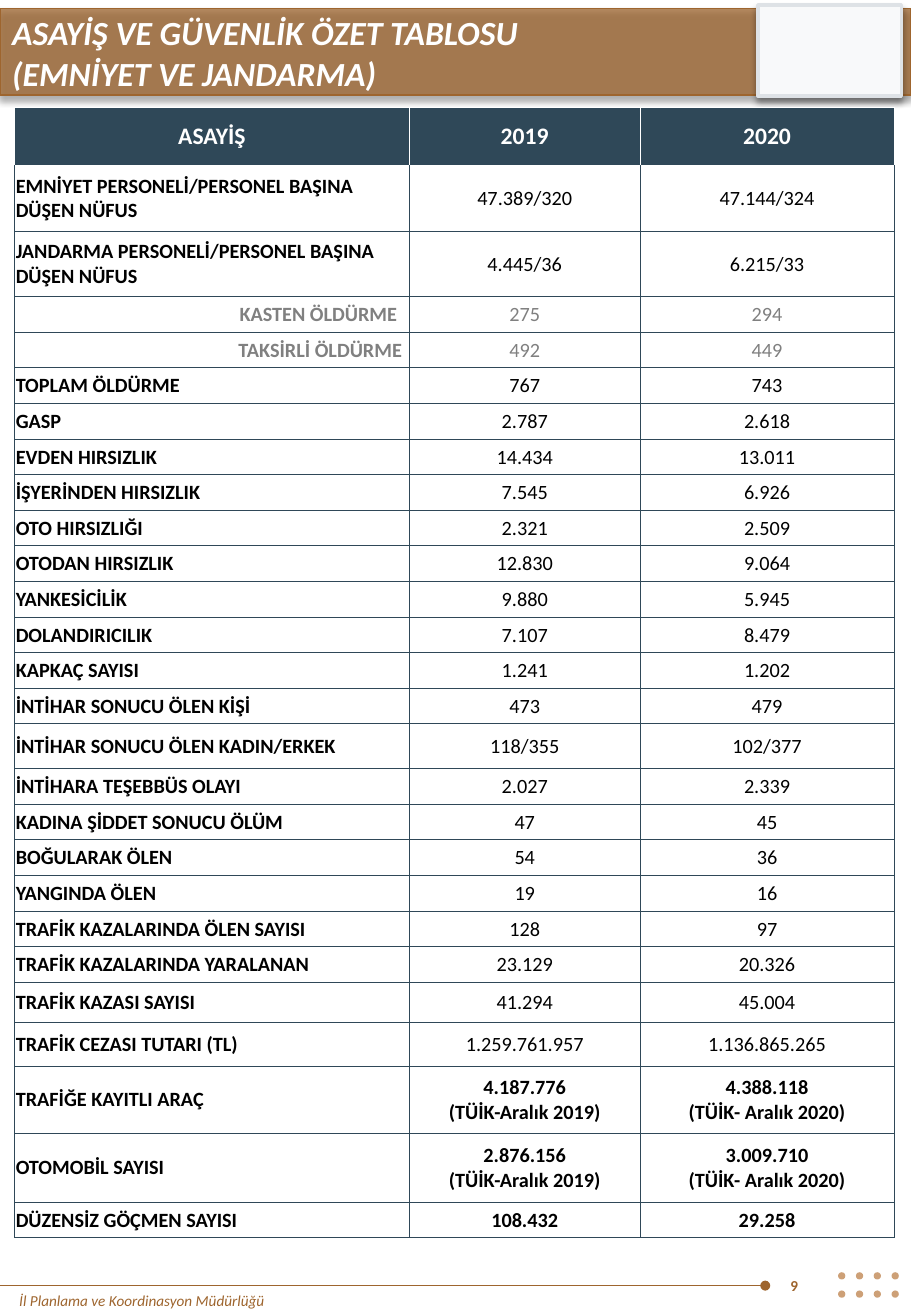
from lxml.etree import SubElement as Sub
from pptx import Presentation
from pptx.dml.color import RGBColor
from pptx.enum.shapes import MSO_CONNECTOR as Link, MSO_SHAPE as Kind
from pptx.enum.text import MSO_ANCHOR as Anchor, MSO_AUTO_SIZE as Fit, PP_ALIGN as Align
from pptx.oxml.ns import qn
from pptx.util import Inches, Pt

BROWN, TAN, NAVY, WHITE, BLACK, GREY = "9E652E", "CDA077", "2F4858", "FFFFFF", "000000", "808080"

TITLE = "ASAYİŞ VE GÜVENLİK ÖZET TABLOSU\n(EMNİYET VE JANDARMA)"
HEAD = ("ASAYİŞ", "2019", "2020")
ROWS = [
    ("EMNİYET PERSONELİ/PERSONEL BAŞINA DÜŞEN NÜFUS", "47.389/320", "47.144/324"),
    ("JANDARMA PERSONELİ/PERSONEL BAŞINA DÜŞEN NÜFUS", "4.445/36", "6.215/33"),
    ("KASTEN ÖLDÜRME", "275", "294"),
    ("TAKSİRLİ ÖLDÜRME", "492", "449"),
    ("TOPLAM ÖLDÜRME", "767", "743"),
    ("GASP", "2.787", "2.618"),
    ("EVDEN HIRSIZLIK", "14.434", "13.011"),
    ("İŞYERİNDEN HIRSIZLIK", "7.545", "6.926"),
    ("OTO HIRSIZLIĞI", "2.321", "2.509"),
    ("OTODAN HIRSIZLIK", "12.830", "9.064"),
    ("YANKESİCİLİK", "9.880", "5.945"),
    ("DOLANDIRICILIK", "7.107", "8.479"),
    ("KAPKAÇ SAYISI", "1.241", "1.202"),
    ("İNTİHAR SONUCU ÖLEN KİŞİ", "473", "479"),
    ("İNTİHAR SONUCU ÖLEN KADIN/ERKEK", "118/355", "102/377"),
    ("İNTİHARA TEŞEBBÜS OLAYI", "2.027", "2.339"),
    ("KADINA ŞİDDET SONUCU ÖLÜM", "47", "45"),
    ("BOĞULARAK ÖLEN", "54", "36"),
    ("YANGINDA ÖLEN", "19", "16"),
    ("TRAFİK KAZALARINDA ÖLEN SAYISI", "128", "97"),
    ("TRAFİK KAZALARINDA YARALANAN", "23.129", "20.326"),
    ("TRAFİK KAZASI SAYISI", "41.294", "45.004"),
    ("TRAFİK CEZASI TUTARI (TL)", "1.259.761.957", "1.136.865.265"),
    ("TRAFİĞE KAYITLI ARAÇ", "4.187.776\n(TÜİK-Aralık 2019)", "4.388.118\n(TÜİK- Aralık 2020)"),
    ("OTOMOBİL SAYISI", "2.876.156\n(TÜİK-Aralık 2019)", "3.009.710\n(TÜİK- Aralık 2020)"),
    ("DÜZENSİZ GÖÇMEN SAYISI", "108.432", "29.258"),
]
INDENT = {3: 0.1, 4: 0.06}  # right margin of the grey sub-rows
TALL = {0: 0.48, 1: 0.54, 2: 0.54, 15: 0.37, 22: 0.33, 23: 0.36, 24: 0.55, 25: 0.57}
BOLD_FROM = 24


def tint(hue):
    return RGBColor.from_string(hue)


def write(frame, text, size=12, hue=BLACK, bold=False, italic=False, align=Align.LEFT):
    """Fill a text frame, one paragraph per line of text."""
    frame.word_wrap = True
    frame.text = text
    for para in frame.paragraphs:
        para.alignment = align
        font = para.font
        font.name, font.size, font.bold, font.italic = "Calibri", Pt(size), bold, italic
        font.color.rgb = tint(hue)


class Page:
    def __init__(self, slide, font_size):
        self.slide, self.shapes, self.size = slide, slide.shapes, font_size

    def shape(self, kind, box, fill, line=None, width=1, alpha=None, shade=False):
        item = self.shapes.add_shape(kind, *map(Inches, box))
        item.shadow.inherit = False
        item.fill.solid()
        item.fill.fore_color.rgb = tint(fill)
        if alpha:
            hue = item.element.spPr.find(qn("a:solidFill"))[0]
            Sub(hue, qn("a:alpha"), val=str(alpha * 1000))
        if line:
            item.line.color.rgb = tint(line)
            item.line.width = Pt(width)
        else:
            item.line.fill.background()
        if shade:
            fx = item.element.spPr.find(qn("a:effectLst"))
            cast = Sub(fx, qn("a:outerShdw"), blurRad=str(Pt(4)), dist=str(Pt(3)),
                       dir="5400000", algn="t", rotWithShape="0")
            Sub(Sub(cast, qn("a:srgbClr"), val=BLACK), qn("a:alpha"), val="40000")

    def rule(self, start, end, hue, width):
        """Draw a line with a round dot at its start."""
        line = self.shapes.add_connector(Link.STRAIGHT, *map(Inches, start + end))
        line.line.color.rgb = tint(hue)
        line.line.width = Pt(width)
        Sub(line.line._get_or_add_ln(), qn("a:headEnd"), type="oval")
        Sub(line.element.spPr, qn("a:effectLst"))

    def label(self, box, text, anchor=Anchor.TOP, **style):
        frame = self.shapes.add_textbox(*map(Inches, box)).text_frame
        write(frame, text, **style)
        frame.vertical_anchor = anchor

    def title(self, box, text, **style):
        item = self.shapes.title
        item.left, item.top, item.width, item.height = map(Inches, box)
        write(item.text_frame, text, **style)
        item.text_frame.vertical_anchor = Anchor.TOP
        item.text_frame.auto_size = Fit.NONE
        item.element.getparent().append(item.element)

    def cell(self, cell, text, fill, edges, right=0.01, **style):
        """Format a cell; edges lists the left, right, top and bottom colours."""
        props = cell._tc.get_or_add_tcPr()
        for side, hue in zip("LRTB", edges):
            line = Sub(props, qn("a:ln" + side), w=str(Pt(0.25)))
            Sub(Sub(line, qn("a:solidFill")), qn("a:srgbClr"), val=hue)
        cell.fill.solid()
        cell.fill.fore_color.rgb = tint(fill)
        cell.margin_left = cell.margin_top = Inches(0.01)
        cell.margin_right, cell.margin_bottom = Inches(right), 0
        cell.vertical_anchor = Anchor.MIDDLE
        write(cell.text_frame, text, **style)

    def table(self, box, widths):
        count = len(ROWS) + 1
        grid = self.shapes.add_table(count, len(HEAD), *map(Inches, box)).table
        grid.first_row = grid.horz_banding = False
        for col, width in zip(grid.columns, widths):
            col.width = Inches(width)
        plain = (box[3] - sum(TALL.values())) / (count - len(TALL))
        for i, row in enumerate(grid.rows):
            row.height = Inches(TALL.get(i, plain))
        for j, text in enumerate(HEAD):
            self.cell(grid.cell(0, j), text, NAVY, [WHITE] * 4, size=14, hue=WHITE,
                      bold=True, align=Align.CENTER)
        for i, texts in enumerate(ROWS, 1):
            edges = [NAVY, NAVY, WHITE if i == 1 else NAVY, NAVY]
            sub = i in INDENT
            for j, text in enumerate(texts):
                side = Align.CENTER if j else Align.RIGHT if sub else Align.LEFT
                self.cell(grid.cell(i, j), text, WHITE, edges,
                          right=0.01 if j else INDENT.get(i, 0.01), size=self.size,
                          hue=GREY if sub else BLACK, bold=j == 0 or i >= BOLD_FROM, align=side)


def main():
    deck = Presentation()
    deck.slide_width, deck.slide_height = Inches(7.5), Inches(10.83)
    page = Page(deck.slides.add_slide(deck.slide_layouts[5]), 12)

    page.shape(Kind.RECTANGLE, (0, 0.07, 7.5, 0.71), BROWN, BROWN, alpha=75, shade=True)
    page.shape(Kind.RECTANGLE, (6.24, 0.04, 1.18, 0.75), "F8F9FA", "DEE2E6", 2, shade=True)
    page.rule((6.3, 10.58), (0, 10.58), BROWN, 0.5)
    for top in (10.47, 10.62):
        for i in range(4):
            page.shape(Kind.OVAL, (6.9 + i * 0.44 / 3, top, 0.06, 0.06), TAN)
    page.label((0.06, 10.58, 4.69, 0.25), "İl Planlama ve Koordinasyon Müdürlüğü",
               size=9, hue=BROWN, italic=True)
    page.title((0, 0.05, 7.5, 0.77), TITLE, size=20, hue=WHITE, bold=True, italic=True)
    page.label((6.41, 10.37, 0.5, 0.42), "9", Anchor.MIDDLE, size=9, hue=BROWN, bold=True)
    page.table((0.12, 0.88, 7.24, 9.31), (3.25, 1.9, 2.09))
    deck.save("out.pptx")


if __name__ == "__main__":
    main()
